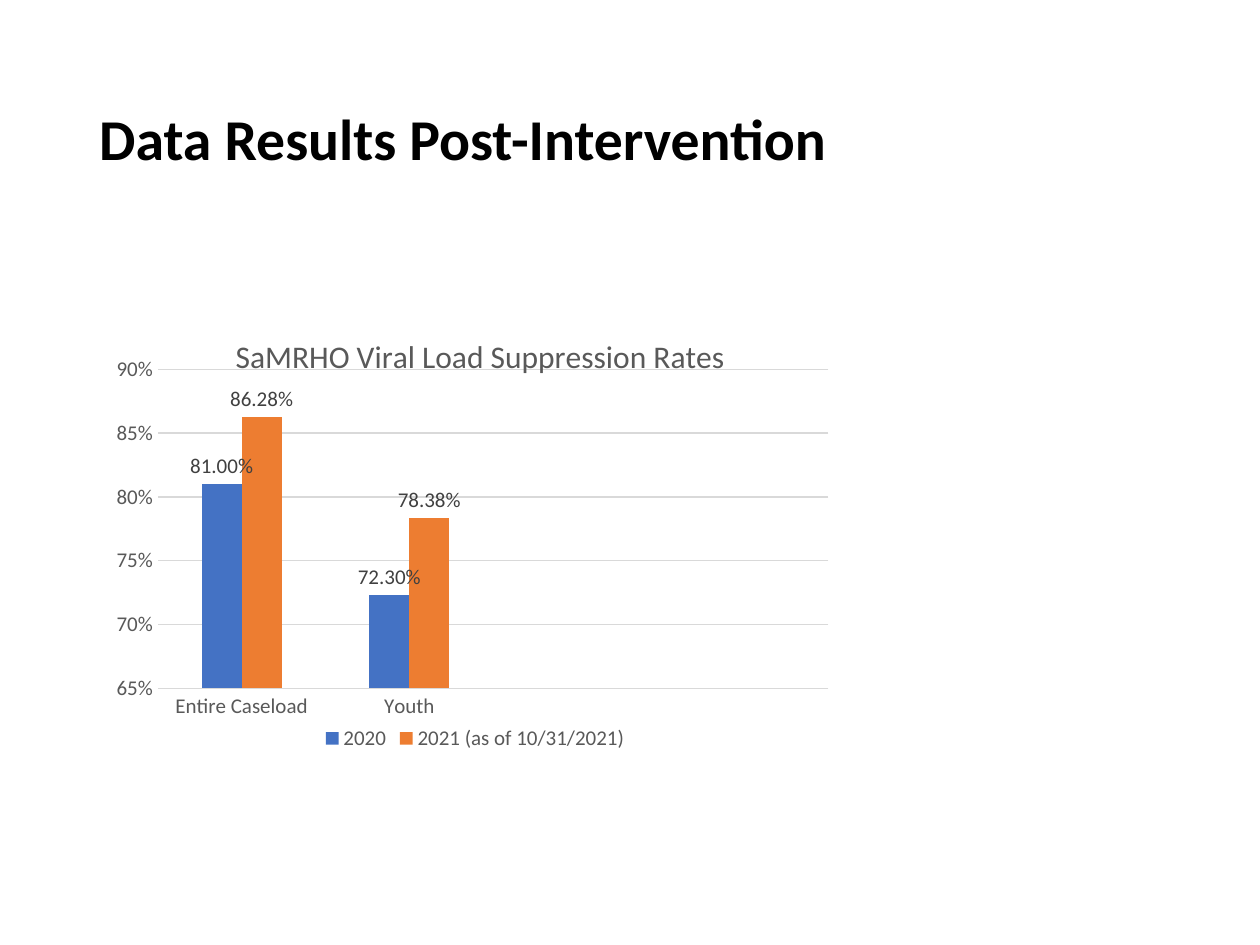
from lxml import etree
from pptx import Presentation
from pptx.chart import data
from pptx.dml import color
from pptx.enum import chart as kind, text
from pptx.oxml import ns
from pptx.util import Pt


def ink(value):
    return color.RGBColor.from_string(value)


def place(parent, spots):
    for old in parent.findall(ns.qn("c:layout")):
        parent.remove(old)
    layout = etree.Element(ns.qn("c:layout"))
    manual = etree.SubElement(layout, ns.qn("c:manualLayout"))
    for tag, value in spots.items():
        etree.SubElement(manual, ns.qn("c:" + tag)).set("val", str(value))
    return layout


deck = Presentation()
deck.slide_width, deck.slide_height = Pt(720), Pt(540)
slide = deck.slides.add_slide(deck.slide_layouts[5])

title = slide.shapes.title
title.left, title.top, title.width, title.height = Pt(49.5), Pt(28.75), Pt(621), Pt(104.4)
frame = title.text_frame
frame.text = "Data Results Post-Intervention"
frame.vertical_anchor = text.MSO_ANCHOR.MIDDLE
para = frame.paragraphs[0]
para.alignment = text.PP_ALIGN.LEFT
para.line_spacing = 0.9
font = para.runs[0].font
font.name, font.size, font.bold = "Calibri", Pt(33), True
font.color.rgb = ink("000000")

rates = data.CategoryChartData(number_format="0.00%")
rates.categories = ["Entire Caseload", "Youth", "", ""]
rates.add_series("2020", [0.81, 0.723, None, None])
rates.add_series("2021 (as of 10/31/2021)", [0.8628, 0.7838, None, None])
chart = slide.shapes.add_chart(
    kind.XL_CHART_TYPE.COLUMN_CLUSTERED, Pt(65.5), Pt(175), Pt(412), Pt(257), rates
).chart
chart.font.name, chart.font.size = "Calibri", Pt(12)
chart.font.color.rgb = ink("595959")

chart.has_title = True
head = chart.chart_title
head.text_frame.text = "SaMRHO Viral Load Suppression Rates"
font = head.text_frame.paragraphs[0].runs[0].font
font.name, font.size, font.bold = "Calibri", Pt(18), False
font.color.rgb = ink("595959")
node = head._element
spots = {"xMode": "edge", "yMode": "edge", "x": 0.16, "y": 0.05}
layout = place(node, spots)
node.find(ns.qn("c:tx")).addnext(layout)
head.include_in_layout = True

chart.has_legend = True
chart.legend.position = kind.XL_LEGEND_POSITION.BOTTOM
chart.legend.include_in_layout = False

area = chart._chartSpace.chart.plotArea
spots = {"layoutTarget": "inner", "xMode": "edge", "yMode": "edge",
         "x": 0.06, "y": 0.14, "w": 0.93, "h": 0.71}
area.insert(0, place(area, spots))

cats, vals = chart.category_axis, chart.value_axis
for axis in (cats, vals):
    axis.major_tick_mark = axis.minor_tick_mark = kind.XL_TICK_MARK.NONE
vals.minimum_scale, vals.maximum_scale, vals.major_unit = 0.65, 0.9, 0.05
vals.tick_labels.number_format = "0%"
vals.tick_labels.number_format_is_linked = False
vals.format.line.fill.background()
for line in (cats.format.line, vals.major_gridlines.format.line):
    line.width = Pt(0.75)
    line.color.rgb = ink("D9D9D9")

plot = chart.plots[0]
plot.gap_width, plot.overlap, plot.vary_by_categories = 219, 0, False
for series, fill in zip(plot.series, ["4472C4", "ED7D31"]):
    series.format.fill.solid()
    series.format.fill.fore_color.rgb = ink(fill)
    series.invert_if_negative = False
    labels = series.data_labels
    labels.show_value = True
    labels.number_format, labels.number_format_is_linked = "0.00%", False
    labels.position = kind.XL_LABEL_POSITION.OUTSIDE_END
    labels.font.name, labels.font.size = "Calibri", Pt(12)
    labels.font.color.rgb = ink("404040")

deck.save("out.pptx")
